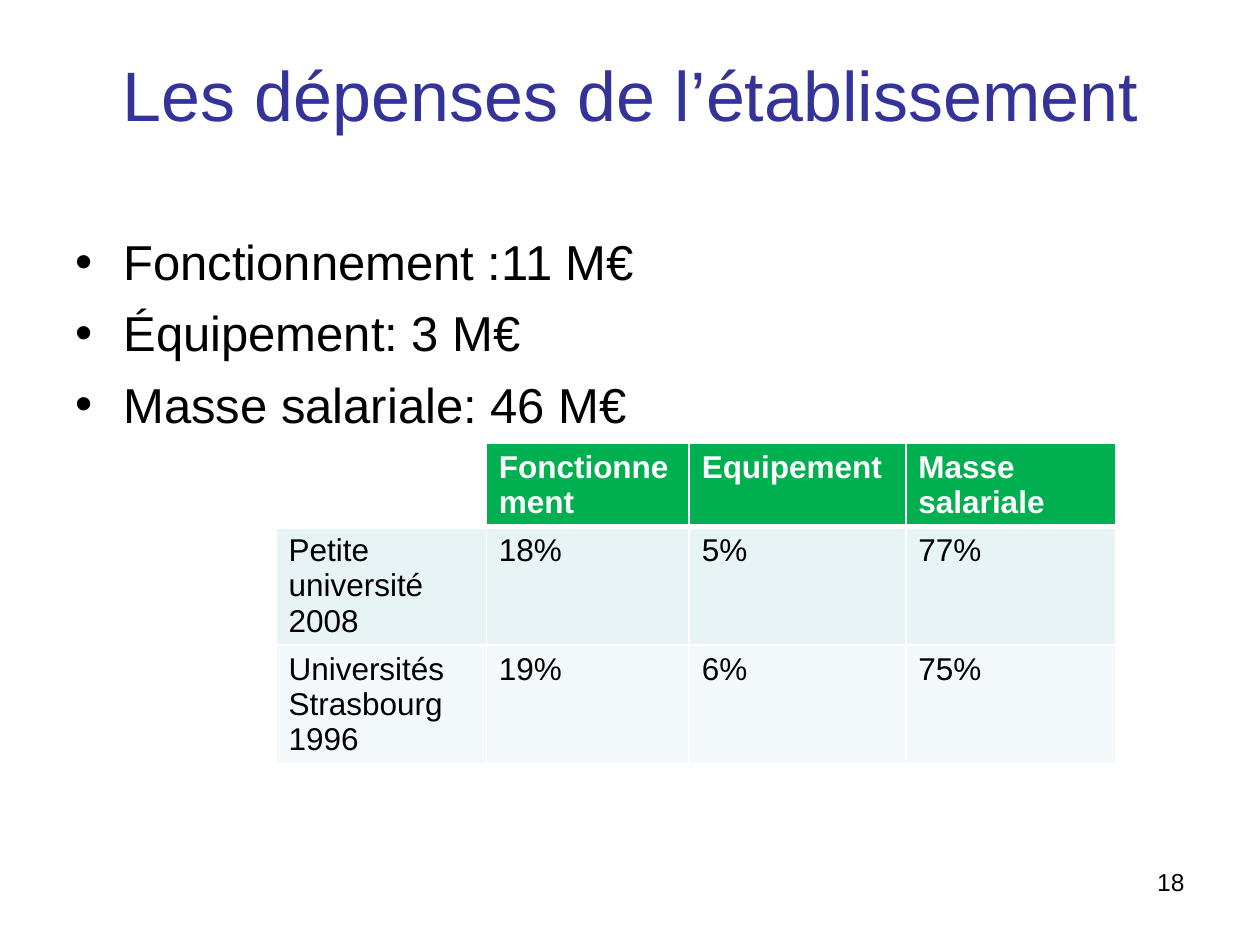
import pptx
import pptx.util
import pptx.dml.color
import pptx.enum.text
import pptx.oxml
import pptx.oxml.ns


def color(value):
    return pptx.dml.color.RGBColor.from_string(value)


class SlideBuilder:
    """Holds the style and the current slide; places are shares of the slide."""

    font = "Arial"
    black, white, title_blue, green = "000000", "FFFFFF", "333399", "00B050"
    row_fills = ["E7F3F4", "F3F9FA"]

    def __init__(self, presentation):
        self.width = presentation.slide_width
        self.height = presentation.slide_height
        self.slide = presentation.slides.add_slide(presentation.slide_layouts[1])

    def box(self, left, top, width, height):
        return (round(left * self.width), round(top * self.height),
                round(width * self.width), round(height * self.height))

    def place(self, shape, left, top, width, height):
        shape.left, shape.top, shape.width, shape.height = self.box(
            left, top, width, height)

    def set_text(self, text_frame, text, size, text_color, bold=False, align="LEFT"):
        text_frame.text = text
        for paragraph in text_frame.paragraphs:
            paragraph.alignment = pptx.enum.text.PP_ALIGN[align]
            for run in paragraph.runs:
                run.font.name = self.font
                run.font.size = pptx.util.Pt(size)
                run.font.bold = bold
                run.font.color.rgb = color(text_color)

    def set_frame(self, text_frame, margin_top=0.05):
        text_frame.word_wrap = True
        text_frame.auto_size = pptx.enum.text.MSO_AUTO_SIZE.NONE
        text_frame.vertical_anchor = pptx.enum.text.MSO_ANCHOR.TOP
        text_frame.margin_top = pptx.util.Inches(margin_top)

    def title(self, text, *place):
        shape = self.slide.shapes.title
        self.place(shape, *place)
        self.set_frame(shape.text_frame, 0.11)
        self.set_text(shape.text_frame, text, 40, self.title_blue, align="CENTER")

    def bullets(self, items, *place):
        shape = self.slide.placeholders[1]
        self.place(shape, *place)
        self.set_frame(shape.text_frame, 0.09)
        self.set_text(shape.text_frame, "\n".join(items), 28, self.black)
        indent = pptx.util.Inches(0.38)
        for index, paragraph in enumerate(shape.text_frame.paragraphs):
            properties = paragraph._p.get_or_add_pPr()
            properties.set("marL", str(indent))
            properties.set("indent", str(-indent))
            properties.append(pptx.oxml.parse_xml(
                f'<a:buChar {pptx.oxml.ns.nsdecls("a")} char="•"/>'))
            paragraph.space_before = pptx.util.Pt(7 if index else 0)

    def label(self, text, *place):
        shape = self.slide.shapes.add_textbox(*self.box(*place))
        self.set_frame(shape.text_frame)
        self.set_text(shape.text_frame, text, 14, self.black, align="RIGHT")

    def borders(self, cell, top=1, bottom=1):
        properties = cell._tc.get_or_add_tcPr()
        sides = {"L": 1, "R": 1, "T": top, "B": bottom}
        for index, (side, points) in enumerate(sides.items()):
            line = pptx.oxml.parse_xml(
                f'<a:ln{side} {pptx.oxml.ns.nsdecls("a")} w="{pptx.util.Pt(points)}">'
                f'<a:solidFill><a:srgbClr val="{self.white}"/></a:solidFill>'
                f'</a:ln{side}>')
            properties.insert(index, line)

    def table(self, rows, column_widths, row_heights, left, top):
        place = self.box(left, top, sum(column_widths), sum(row_heights))
        table = self.slide.shapes.add_table(
            len(rows), len(column_widths), *place).table
        for column, share in zip(table.columns, column_widths):
            column.width = round(share * self.width)
        for row, share in zip(table.rows, row_heights):
            row.height = round(share * self.height)
        for row_index, texts in enumerate(rows):
            header = row_index == 0
            for column_index, text in enumerate(texts):
                cell = table.cell(row_index, column_index)
                self.set_text(cell.text_frame, text, 18,
                              self.white if header else self.black, bold=header)
                if text:
                    cell.fill.solid()
                    cell.fill.fore_color.rgb = color(
                        self.green if header else self.row_fills[row_index - 1])
                else:
                    cell.fill.background()
                self.borders(cell, top=3 if row_index == 1 else 1,
                             bottom=3 if header else 1)


def main():
    presentation = pptx.Presentation()
    presentation.slide_width = pptx.util.Inches(10)
    presentation.slide_height = pptx.util.Inches(7.5)
    builder = SlideBuilder(presentation)

    # Title and list of expenses
    builder.title("Les dépenses de l’établissement", 0.05, 0.04, 0.9, 0.17)
    builder.bullets(
        ["Fonctionnement :11 M€", "Équipement: 3 M€", "Masse salariale: 46 M€"],
        0.05, 1.75 / 7.5, 0.9, 0.66)

    # Slide number
    builder.label("18", 7.17 / 10, 6.83 / 7.5, 2.33 / 10, 0.07)

    # Shares of spending by university
    builder.table(
        [["", "Fonctionnement", "Equipement", "Masse salariale"],
         ["Petite université\n2008", "18%", "5%", "77%"],
         ["Universités\nStrasbourg\n1996", "19%", "6%", "75%"]],
        [1.67 / 10, 1.61 / 10, 1.72 / 10, 1.67 / 10],
        [0.65 / 7.5, 0.94 / 7.5, 0.94 / 7.5], 2.19 / 10, 3.52 / 7.5)

    presentation.save("out.pptx")


if __name__ == "__main__":
    main()
